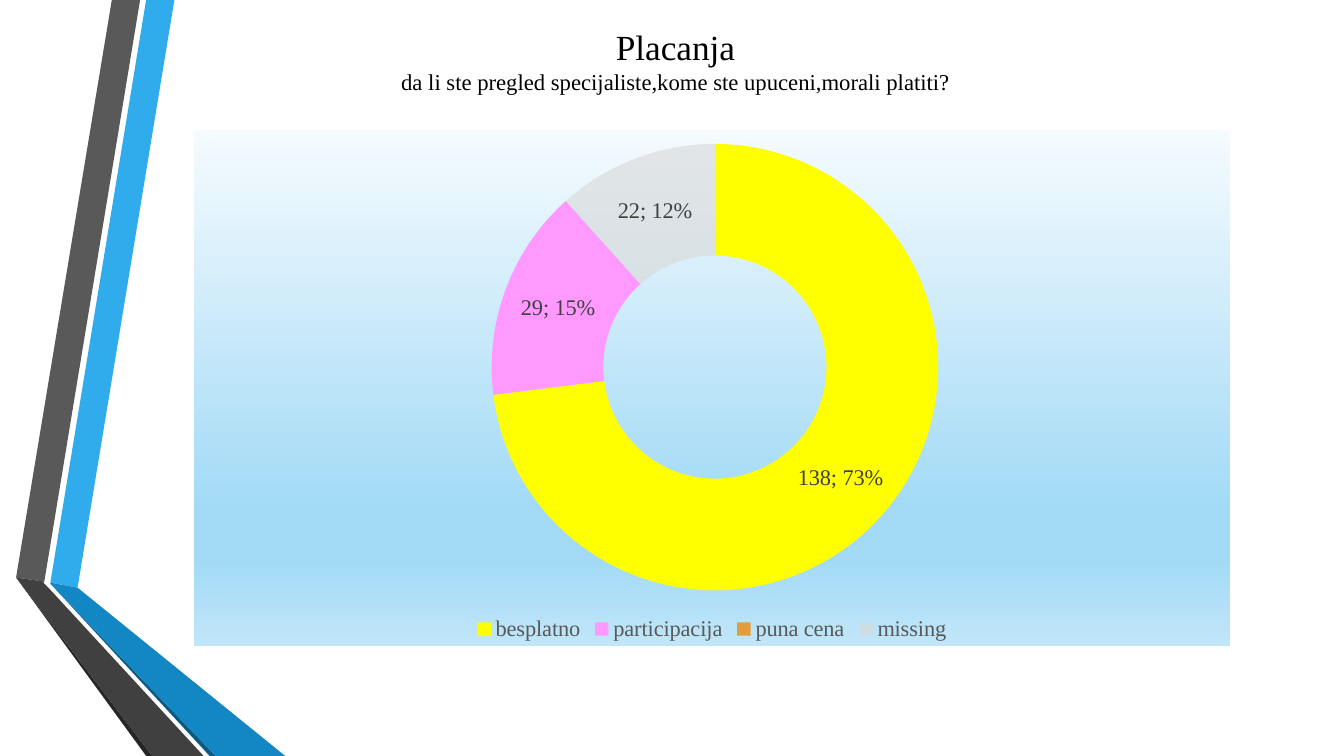
import pptx
import pptx.chart.data
import pptx.dml.color
import pptx.enum.chart
import pptx.enum.text
import pptx.oxml
import pptx.oxml.ns
import pptx.util

PX = 9144
FONT = "Times New Roman"
RIBBONS = [
    ("30ACEC", [(50, 578), (77, 583), (173, 0), (145, 0)]),
    ("595959", [(139, 0), (111, 0), (16, 573), (44, 577)]),
    ("262626", [(16, 573), (145, 750), (151, 750)]),
    ("0C5A82", [(50, 579), (208, 750), (214, 750)]),
    ("1287C3", [(50, 579), (214, 750), (283, 750), (77, 583), (50, 578)]),
    ("404040", [(202, 750), (48, 583), (43, 578), (44, 577), (16, 573), (151, 750)]),
]
ANSWERS = [
    ("besplatno", 138, "FFFF00"),
    ("participacija", 29, "FF99FF"),
    ("puna cena", None, "E29D3E"),
    ("missing", 22, "D9D9D9"),
]
BACKDROP = [(0, "F5FBFE"), (74, "A2DAF6"), (83, "A2DAF6"), (100, "C1E6F9")]
RING = {"x": 0.287, "y": 0.027, "w": 0.432, "h": 0.865}


def px(*lengths):
    return [length * PX for length in lengths]


def color(value):
    return pptx.dml.color.RGBColor.from_string(value)


def style_font(font, size, value):
    font.name = FONT
    font.size = pptx.util.Pt(size)
    font.color.rgb = color(value)


def chart_xml(body):
    return pptx.oxml.parse_xml(body.replace(">", f" {pptx.oxml.ns.nsdecls('c', 'a')}>", 1))


def add_ribbon(page, value, points):
    builder = page.shapes.build_freeform(*points[0], scale=PX)
    builder.add_line_segments(points[1:], close=True)
    ribbon = builder.convert_to_shape()
    ribbon.shadow.inherit = False
    ribbon.fill.solid()
    ribbon.fill.fore_color.rgb = color(value)
    ribbon.line.fill.background()


def fill_title(title, lines, sizes):
    title.left, title.top, title.width, title.height = px(120, 31, 1100, 58)
    frame = title.text_frame
    frame.text = "\v".join(lines)
    frame.word_wrap = True
    frame.auto_size = pptx.enum.text.MSO_AUTO_SIZE.NONE
    frame.vertical_anchor = pptx.enum.text.MSO_ANCHOR.MIDDLE
    para = frame.paragraphs[0]
    para.alignment = pptx.enum.text.PP_ALIGN.CENTER
    for span, size in zip(para.runs, sizes):
        style_font(span.font, size, "000000")


def fill_backdrop(chart):
    stops = "".join(
        f'<a:gs pos="{position * 1000}"><a:srgbClr val="{value}"/></a:gs>'
        for position, value in BACKDROP
    )
    backdrop = chart_xml(
        f"<c:spPr><a:gradFill><a:gsLst>{stops}</a:gsLst>"
        '<a:lin ang="5400000" scaled="0"/></a:gradFill>'
        "<a:ln><a:noFill/></a:ln></c:spPr>"
    )
    chart.element.xpath("c:chart")[0].addnext(backdrop)


def place_ring(chart):
    modes = "".join(f'<c:{side}Mode val="edge"/>' for side in "xy")
    sides = "".join(f'<c:{side} val="{share}"/>' for side, share in RING.items())
    layout = chart_xml(
        '<c:layout><c:manualLayout><c:layoutTarget val="inner"/>'
        f"{modes}{sides}</c:manualLayout></c:layout>"
    )
    area = chart.element.xpath("c:chart/c:plotArea")[0]
    for existing in area.xpath("c:layout"):
        area.remove(existing)
    area.insert(0, layout)
    area.xpath(".//c:holeSize")[0].set("val", "35")


def add_labels(chart, series):
    labels = series.data_labels
    labels.show_value = True
    labels.show_percentage = True
    style_font(labels.font, 16, "404040")
    separator = chart_xml("<c:separator>; </c:separator>")
    chart.element.xpath(".//c:ser/c:dLbls/c:showBubbleSize")[0].addnext(separator)


def add_doughnut(page):
    data = pptx.chart.data.CategoryChartData()
    data.categories = [name for name, count, value in ANSWERS]
    data.add_series("Series 1", [count for name, count, value in ANSWERS])
    kind = pptx.enum.chart.XL_CHART_TYPE.DOUGHNUT
    chart = page.shapes.add_chart(kind, *px(192, 129, 1028, 512), data).chart
    chart.has_title = False
    style_font(chart.font, 16, "000000")
    chart.has_legend = True
    chart.legend.position = pptx.enum.chart.XL_LEGEND_POSITION.BOTTOM
    chart.legend.include_in_layout = False
    style_font(chart.legend.font, 16, "595959")

    plot = chart.plots[0]
    plot.vary_by_categories = True
    series = plot.series[0]
    for index, (name, count, value) in enumerate(ANSWERS):
        slice_format = series.points[index].format
        slice_format.fill.solid()
        slice_format.fill.fore_color.rgb = color(value)
        slice_format.line.fill.background()
    missing = chart.element.xpath(".//c:dPt[last()]//a:srgbClr")[0]
    missing.append(chart_xml('<a:alpha val="62000"></a:alpha>'))

    add_labels(chart, series)
    place_ring(chart)
    fill_backdrop(chart)


def main():
    deck = pptx.Presentation()
    deck.slide_width, deck.slide_height = px(1333, 750)
    page = deck.slides.add_slide(deck.slide_layouts[5])
    for value, points in RIBBONS:
        add_ribbon(page, value, points)
    question = "da li ste pregled specijaliste,kome ste upuceni,morali platiti?"
    fill_title(page.shapes.title, ["Placanja", question], [25.2, 16.2])
    add_doughnut(page)
    deck.save("out.pptx")


if __name__ == "__main__":
    main()
